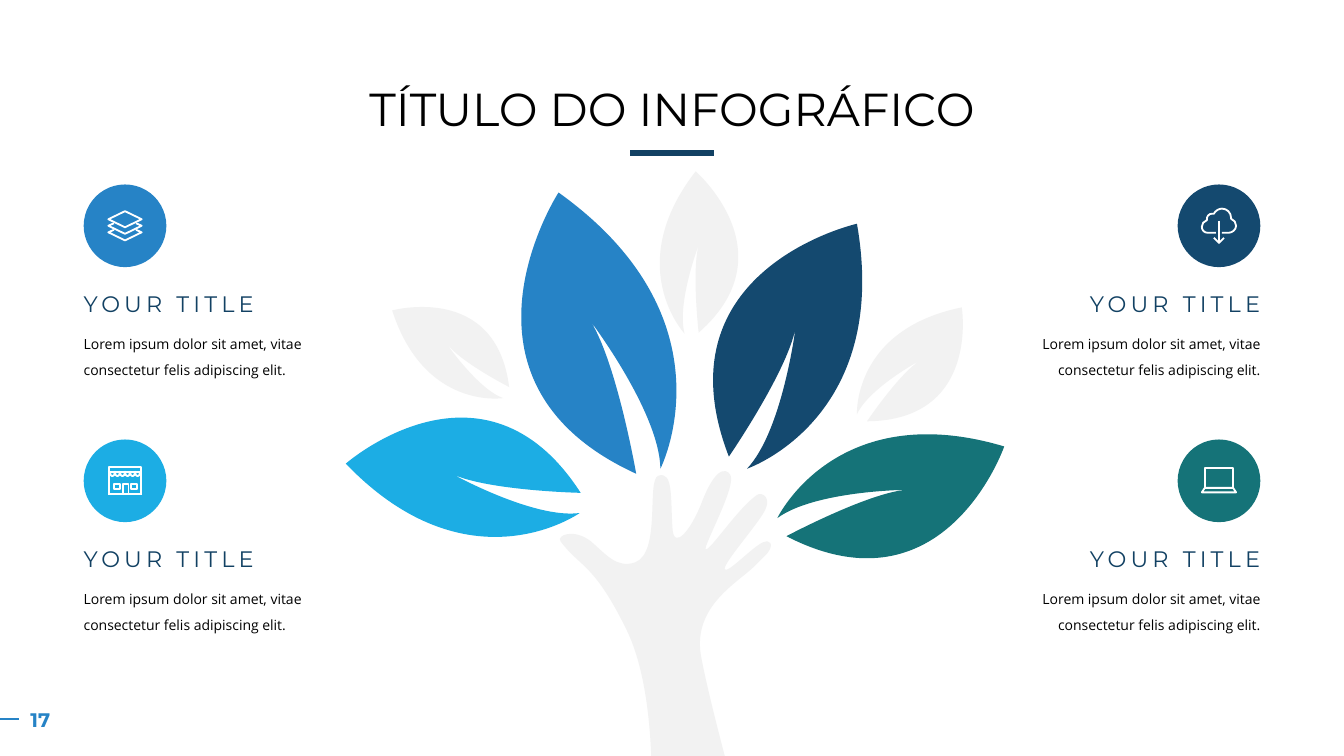
from lxml import etree
from pptx import Presentation
from pptx.dml.color import RGBColor
from pptx.enum.shapes import MSO_CONNECTOR, MSO_SHAPE
from pptx.enum.text import MSO_ANCHOR, MSO_AUTO_SIZE, PP_ALIGN
from pptx.oxml.ns import qn
from pptx.util import Inches, Pt

STRAIGHT, OVAL = MSO_CONNECTOR.STRAIGHT, MSO_SHAPE.OVAL
TOP, MIDDLE = MSO_ANCHOR.TOP, MSO_ANCHOR.MIDDLE
LEFT, CENTER, RIGHT = PP_ALIGN.LEFT, PP_ALIGN.CENTER, PP_ALIGN.RIGHT
GROW = MSO_AUTO_SIZE.SHAPE_TO_FIT_TEXT

COLORS = {"blue": "2683C6", "navy": "14496F", "sky": "1CADE4", "teal": "157378",
          "pale": "F2F2F2", "ink": "124163", "black": "000000", "white": "FFFFFF"}

# Content
TITLE = "TÍTULO DO INFOGRÁFICO"
PAGE = "17"
HEADING = "YOUR TITLE"
BODY = "Lorem ipsum dolor sit amet, vitae consectetur felis adipiscing elit."
# icon, colour, column, row
ITEMS = [("store", "sky", 0, 1), ("layers", "blue", 0, 0),
         ("cloud", "navy", 1, 0), ("laptop", "teal", 1, 1)]

FORMATS = {
    "title": {"name": "Montserrat", "size": Pt(33), "bold": False},
    "page": {"name": "Montserrat", "size": Pt(14), "bold": True},
    "heading": {"name": "Montserrat", "size": Pt(16)},
    "body": {"name": "Open Sans", "size": Pt(10)},
}

# Outlines: start point, then steps of 2 numbers (line to), 4 (curve whose
# first control is the current point) or 6 (full cubic curve)
LEAVES = [
    ("pale", [(8.5, 4.11), (8.46, 3.27, 9.54, 3.05), (9.72, 4.17, 8.6, 4.18),
              (8.91, 3.72, 9.12, 3.58), (8.62, 3.85, 8.5, 4.11)]),
    ("pale", [(4.99, 3.95), (4.21, 4.07, 3.89, 3.08), (4.92, 2.8, 5.05, 3.84),
              (4.58, 3.6, 4.43, 3.41), (4.74, 3.86, 4.99, 3.95)]),
    ("pale", [(6.79, 3.31), (6.17, 2.64, 6.9, 1.7), (7.83, 2.51, 6.93, 3.3),
              (6.86, 2.69, 6.93, 2.43), (6.71, 3.01, 6.79, 3.31)]),
    ("teal", [(7.71, 5.14), (8.29, 3.93, 9.96, 4.43), (9.37, 6.13, 7.8, 5.32),
              (8.59, 4.9, 8.98, 4.86), (8.08, 4.87, 7.71, 5.14)]),
    ("sky", [(5.75, 5.09), (4.65, 5.87, 3.43, 4.6), (4.8, 3.4, 5.76, 4.89),
             (4.87, 4.87, 4.5, 4.71), (5.3, 5.15, 5.75, 5.09)]),
    ("blue", [(6.55, 4.65), (7.3, 3.17, 5.54, 1.91), (4.32, 3.79, 6.31, 4.7),
              (6.12, 3.61, 5.86, 3.19), (6.54, 4.09, 6.55, 4.65)]),
    ("navy", [(7.41, 4.65), (8.84, 4.16, 8.5, 2.22), (6.51, 2.67, 7.23, 4.53),
              (7.8, 3.7, 7.89, 3.26), (7.76, 4.28, 7.41, 4.65)]),
]
HAND = [
    (6.45, 8.2), (6.45, 8.2, 6.55, 6.95, 6.22, 6.26), (5.89, 5.58, 5.75, 5.63, 5.56, 5.37),
    (5.52, 5.31, 5.69, 5.24, 5.86, 5.37), (6.02, 5.51, 6.12, 5.64, 6.3, 5.58),
    (6.56, 5.48, 6.41, 4.76, 6.53, 4.72), (6.68, 4.67, 6.65, 4.95, 6.67, 5.24),
    (6.68, 5.46, 6.85, 5.28, 6.97, 4.96), (7.13, 4.56, 7.24, 4.68, 7.25, 4.73),
    (7.28, 4.87, 6.97, 5.43, 7, 5.45), (7.04, 5.47, 7.32, 5.04, 7.51, 4.91),
    (7.55, 4.88, 7.68, 4.93, 7.56, 5.11), (7.45, 5.28, 7.16, 5.61, 7.19, 5.65),
    (7.22, 5.69, 7.47, 5.42, 7.57, 5.38), (7.62, 5.35, 7.69, 5.39, 7.61, 5.49),
    (7.58, 5.52, 7.51, 5.59, 7.47, 5.63), (7.3, 5.79, 6.88, 6.02, 6.95, 6.49),
    (7.03, 6.95, 7.34, 8.06, 7.34, 8.06), (6.45, 8.2),
]


def box(x1, y1, x2, y2):
    return [(x1, y1), (x2, y1), (x2, y2), (x1, y2), (x1, y1)]


# Icon strokes in hundredths of an inch from the disc centre
AWNING = [(-15, -9)] + [(x, -3, x + 5, -3, x + 5, -9) for x in range(-15, 15, 5)]
ICONS = {
    "layers": [[(-16.5, -6.5), (0, -14.5), (16.5, -6.5), (0, 1.5), (-16.5, -6.5)]]
              + [[(-11, y - 2.5), (-16.5, y), (0, y + 8), (16.5, y), (11, y - 2.5)]
                 for y in (0, 6.5)],
    "store": [box(-15.5, -14, 15.5, -9), box(-15.5, -9, 15.5, 13), AWNING,
              [(-17, -9), (17, -9)], [(-17, 13), (17, 13)], box(-2, 3.5, 3.5, 13),
              box(-10.5, 3.5, -5, 8.5), box(6, 3.5, 11.5, 8.5)],
    "cloud": [[(-3, 7), (-11, 7), (-14.5, 7, -17, 4.5, -17, 1),
               (-17, -2, -15, -4.5, -12, -5.5), (-12.5, -9, -10, -12, -7, -12), (-5, -12),
               (-3.5, -15, 0, -17, 3, -17), (8, -17, 12, -13, 12, -8), (12, -7),
               (15, -6, 17, -3, 17, 0), (17, 4, 13, 7, 9.5, 7), (3, 7)],
              [(0, -5), (0, 17)], [(-5, 12), (0, 17), (5, 12)]],
    "laptop": [box(-14, -12.5, 14, 7),
               [(-14, 7), (14, 7), (17, 11.5), (-17, 11.5), (-14, 7)]],
}

# Layout
MARGIN, ITEM_W, RIGHT_COL = 0.83, 2.67, 9.83
DISC, DISC_TOP, ROW_STEP = 0.82, 1.83, 2.53

prs = Presentation()
prs.slide_width, prs.slide_height = Inches(13.33), Inches(7.5)
s = prs.slides.add_slide(prs.slide_layouts[5])


def color(name):
    return RGBColor.from_string(COLORS[name])


def add_outline(outlines, fill=None, stroke=None, origin=(0, 0), unit=1):
    """Draw the control points as segments, then join each three into a curve."""
    fb, sizes = None, []
    for outline in outlines:
        pts = [outline[0]]
        for step in outline[1:]:
            full = (*pts[-1], *step) if len(step) == 4 else step
            pts += zip(full[::2], full[1::2])
            sizes.append(len(full) // 2)
        emu = [(Inches(origin[0] + x * unit), Inches(origin[1] + y * unit)) for x, y in pts]
        if fb is None:
            fb = s.shapes.build_freeform(*emu[0])
        else:
            fb.move_to(*emu[0])
        fb.add_line_segments(emu[1:], close=emu[0] == emu[-1])
    sp = fb.convert_to_shape()
    segments = iter(list(sp._element.iter(qn("a:lnTo"))))
    for size in sizes:
        group = [next(segments) for _ in range(size)]
        if size == 3:
            curve = etree.Element(qn("a:cubicBezTo"))
            group[0].addprevious(curve)
            for segment in group:
                curve.append(segment[0])
                segment.getparent().remove(segment)
    paint(sp, fill, stroke)


def paint(sp, fill=None, stroke=None):
    sp.shadow.inherit = False
    if fill:
        sp.fill.solid()
        sp.fill.fore_color.rgb = color(fill)
    else:
        sp.fill.background()
    if stroke:
        sp.line.color.rgb = color(stroke)
        sp.line.width = Pt(1.3)
    else:
        sp.line.fill.background()


def add_rule(x1, x2, y, name, width):
    ln = s.shapes.add_connector(STRAIGHT, Inches(x1), Inches(y), Inches(x2), Inches(y))
    ln.line.color.rgb = color(name)
    ln.line.width = Pt(width)
    etree.SubElement(ln._element.spPr, qn("a:effectLst"))


def write(sp, text, style, name, align, anchor=TOP, inset=0, spacing=None, tracking=None):
    tf = sp.text_frame
    frame = {"word_wrap": True, "auto_size": GROW, "vertical_anchor": anchor,
             "margin_left": Inches(inset), "margin_right": Inches(inset),
             "margin_top": Inches(0.05), "margin_bottom": Inches(0.05)}
    for key, value in frame.items():
        setattr(tf, key, value)
    p = tf.paragraphs[0]
    p.alignment = align
    if spacing:
        p.line_spacing = spacing
    r = p.add_run()
    r.text = text
    for key, value in FORMATS[style].items():
        setattr(r.font, key, value)
    r.font.color.rgb = color(name)
    if tracking:
        r._r.get_or_add_rPr().set("spc", str(tracking))


def add_text(x, y, w, h, *args, **kwargs):
    write(s.shapes.add_textbox(*map(Inches, (x, y, w, h))), *args, **kwargs)


# Page number and title
add_text(0.12, 6.97, 0.56, 0.34, PAGE, "page", "blue", CENTER, anchor=MIDDLE, inset=0.1)
add_rule(0, 0.19, 7.13, "blue", 1.5)
title = s.shapes.title
title.left, title.top, title.width, title.height = map(Inches, (MARGIN, 0.75, 11.67, 0.66))
write(title, TITLE, "title", "black", CENTER)
add_rule(6.25, 7.08, 1.52, "ink", 4.25)

# Tree
for leaf_color, leaf in LEAVES:
    add_outline([leaf], fill=leaf_color)
add_outline([HAND], fill="pale")

# Items: body, heading, disc and icon
for icon, name, col, row in ITEMS:
    x = RIGHT_COL if col else MARGIN
    disc_x = x + ITEM_W - DISC if col else x
    y = DISC_TOP + row * ROW_STEP
    align = RIGHT if col else LEFT
    add_text(x, y + 1.37, ITEM_W, 0.58, BODY, "body", "black", align, spacing=1.5)
    add_text(x, y + 1, ITEM_W, 0.37, HEADING, "heading", "ink", align, tracking=300)
    disc = s.shapes.add_shape(OVAL, *map(Inches, (disc_x, y, DISC, DISC)))
    paint(disc, fill=name)
    add_outline(ICONS[icon], stroke="white", origin=(disc_x + DISC / 2, y + DISC / 2), unit=0.01)

prs.save("out.pptx")
